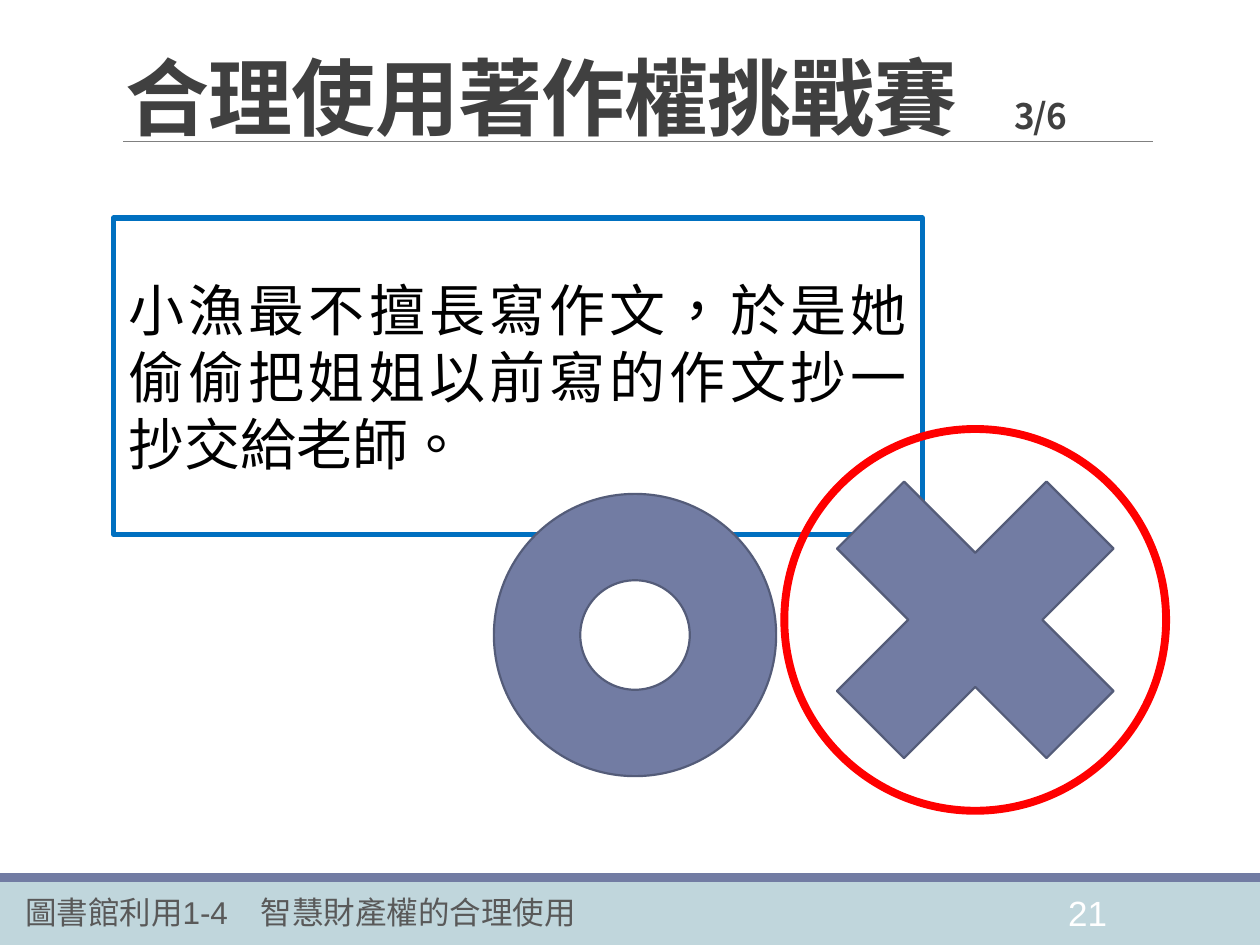
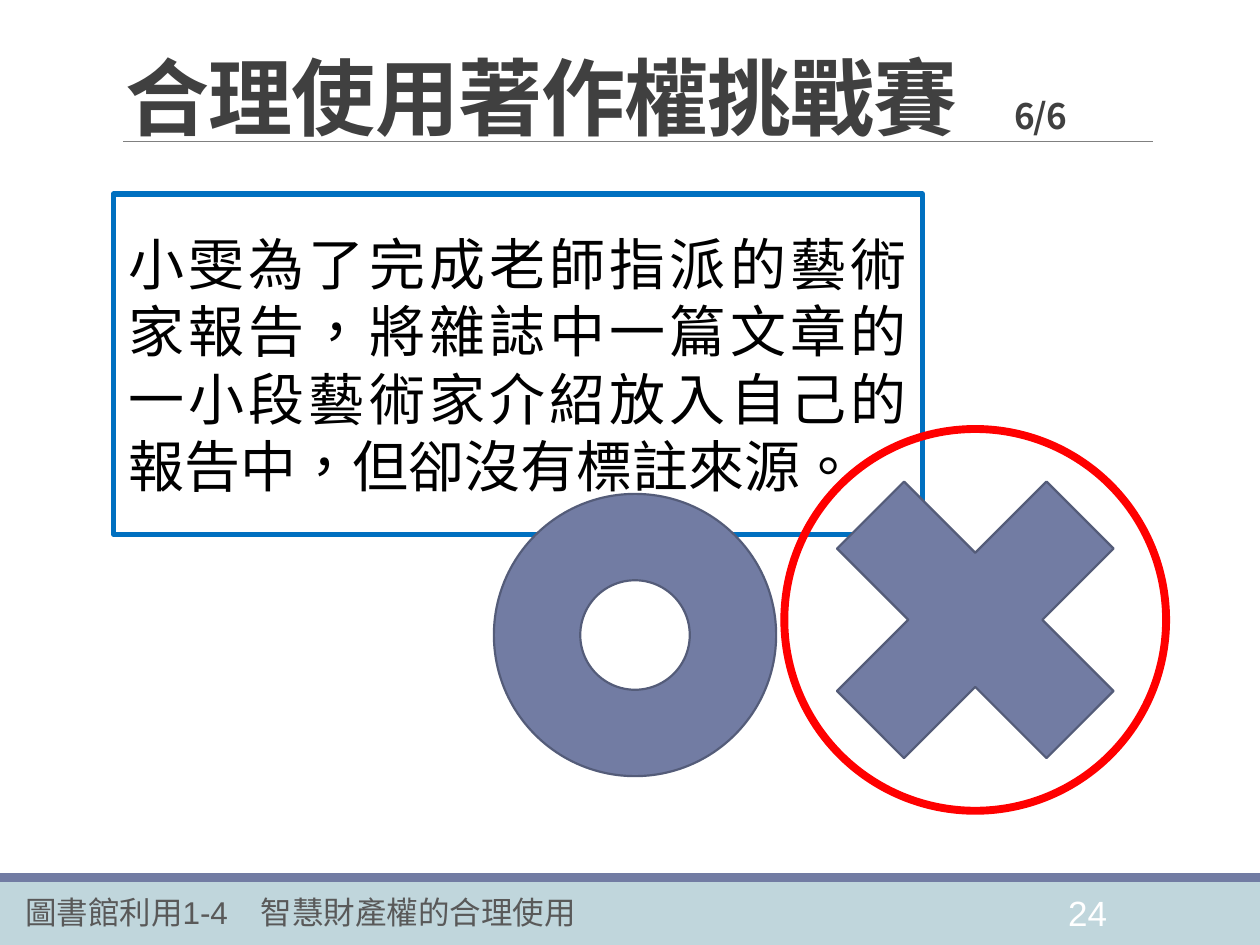
from pptx import Presentation
from pptx.dml.color import RGBColor
from pptx.enum.shapes import MSO_CONNECTOR, MSO_SHAPE
from pptx.enum.text import MSO_ANCHOR, PP_ALIGN
from pptx.oxml.ns import qn
from pptx.util import Inches, Pt
from lxml import etree

TITLE = "合理使用著作權挑戰賽"
FOOTER = "圖書館利用1-4\t智慧財產權的合理使用"
# (counter, page number, top of the question box, question)
QUESTIONS = [
    ("3/6", "21", 1.73,
     "小漁最不擅長寫作文，於是她偷偷把姐姐以前寫的作文抄一抄交給老師。"),
    ("6/6", "24", 1.54,
     "小雯為了完成老師指派的藝術家報告，將雜誌中一篇文章的一小段藝術家介紹"
     "放入自己的報告中，但卻沒有標註來源。"),
]

WIDTH, HEIGHT = 10, 7.5
LEFT, RIGHT = 0.9, 9.15
BAND_TOP, STRIPE = 7, 0.07
QUESTION_WIDTH, QUESTION_BOTTOM = 6.42, 4.24
CROSS_CENTRE = (7.74, 4.92)

WHITE = RGBColor(0xFF, 0xFF, 0xFF)
BLACK = RGBColor(0, 0, 0)
BAND = RGBColor(0xC0, 0xD6, 0xDC)
ACCENT = RGBColor(0x72, 0x7C, 0xA3)
ACCENT_EDGE = RGBColor(0x54, 0x5C, 0x79)
RULE = RGBColor(0x80, 0x80, 0x80)
TITLE_GREY = RGBColor(0x40, 0x40, 0x40)
FOOTER_GREY = RGBColor(0x59, 0x59, 0x59)
BOX_BLUE = RGBColor(0, 0x70, 0xC0)
ANSWER_RED = RGBColor(0xFF, 0, 0)

BODY_FONT, TITLE_FONT = "Arial", "Noto Sans CJK SC"
RECT, DONUT = MSO_SHAPE.RECTANGLE, MSO_SHAPE.DONUT
PLUS, OVAL = MSO_SHAPE.MATH_PLUS, MSO_SHAPE.OVAL
BOTTOM, MIDDLE = MSO_ANCHOR.BOTTOM, MSO_ANCHOR.MIDDLE
JUSTIFY = PP_ALIGN.JUSTIFY


def add_shape(slide, kind, box, fill=None, line=None, weight=1.25):
    sp = slide.shapes.add_shape(kind, *map(Inches, box))
    sp.shadow.inherit = False
    if fill is None:
        sp.fill.background()
    else:
        sp.fill.solid()
        sp.fill.fore_color.rgb = fill
    if line is None:
        sp.line.fill.background()
    else:
        sp.line.color.rgb = line
        sp.line.width = Pt(weight)
    return sp


def square_at(centre, size):
    x, y = centre
    return x - size / 2, y - size / 2, size, size


def add_run(p, text, size, color, name=BODY_FONT, bold=False):
    r = p.add_run()
    r.text = text
    r.font.color.rgb = color
    for key, value in dict(size=Pt(size), name=name, bold=bold).items():
        setattr(r.font, key, value)
    props = r.font._element
    props.set("lang", "zh-TW")
    if name == TITLE_FONT:
        props.set("spc", "-50")
        etree.SubElement(props, qn("a:ea"), typeface=name)


def add_textbox(slide, box, tab=None):
    """Return the text frame of a wrapping box, with one optional tab stop."""
    tf = slide.shapes.add_textbox(*map(Inches, box)).text_frame
    tf.word_wrap = True
    if tab:
        stops = etree.SubElement(tf.paragraphs[0]._p.get_or_add_pPr(), qn("a:tabLst"))
        etree.SubElement(stops, qn("a:tab"), pos=str(Inches(tab)), algn="l")
    return tf


def add_frame(slide, counter, page):
    """Draw the title, rule, bands and footer that every slide shares."""
    add_shape(slide, RECT, (0, BAND_TOP, WIDTH, HEIGHT - BAND_TOP), BAND)
    add_shape(slide, RECT, (0, BAND_TOP - STRIPE, WIDTH, STRIPE), ACCENT)
    rule = slide.shapes.add_connector(
        MSO_CONNECTOR.STRAIGHT, *map(Inches, (0.98, 1.12, RIGHT, 1.12)))
    rule.line.color.rgb = RULE
    rule.line.width = Pt(0.5)
    etree.SubElement(rule._element.spPr, qn("a:effectLst"))

    tf = add_textbox(slide, (8.38, 7.03, 0.7, 0.4))
    add_run(tf.paragraphs[0], page, 20, WHITE)
    tf = add_textbox(slide, (0.1, 7.04, 4.65, 0.4), tab=1.87)
    add_run(tf.paragraphs[0], FOOTER, 18, FOOTER_GREY)

    tf = add_textbox(slide, (LEFT, 0.4, RIGHT - LEFT, 0.81), tab=7.05)
    tf.vertical_anchor = BOTTOM
    p = tf.paragraphs[0]
    p.line_spacing = 0.85
    add_run(p, TITLE + "\t", 48, TITLE_GREY, TITLE_FONT, True)
    add_run(p, counter, 20, TITLE_GREY, TITLE_FONT, True)


def add_question(slide, top, text):
    box = LEFT, top, QUESTION_WIDTH, QUESTION_BOTTOM - top
    tf = add_shape(slide, RECT, box, WHITE, BOX_BLUE, 3).text_frame
    tf.word_wrap = True
    tf.vertical_anchor = MIDDLE
    for side in ("left", "top", "right", "bottom"):
        setattr(tf, f"margin_{side}", Inches(0.12))
    p = tf.paragraphs[0]
    p.alignment = JUSTIFY
    p.space_after = Pt(6)
    add_run(p, text, 32, BLACK)


def add_answers(slide):
    """Draw the two choices, with the cross ringed as the right one."""
    ring = add_shape(slide, DONUT, square_at((5.04, 5.04), 2.24), ACCENT, ACCENT_EDGE)
    ring.adjustments[0] = 0.306
    cross = add_shape(slide, PLUS, square_at(CROSS_CENTRE, 3.2), ACCENT, ACCENT_EDGE)
    cross.rotation = 45
    add_shape(slide, OVAL, square_at(CROSS_CENTRE, 3.03), line=ANSWER_RED, weight=4.5)


def main():
    prs = Presentation()
    prs.slide_width, prs.slide_height = Inches(WIDTH), Inches(HEIGHT)
    for counter, page, top, text in QUESTIONS:
        slide = prs.slides.add_slide(prs.slide_layouts[6])
        add_frame(slide, counter, page)
        add_question(slide, top, text)
        add_answers(slide)
    prs.save("out.pptx")


if __name__ == "__main__":
    main()
